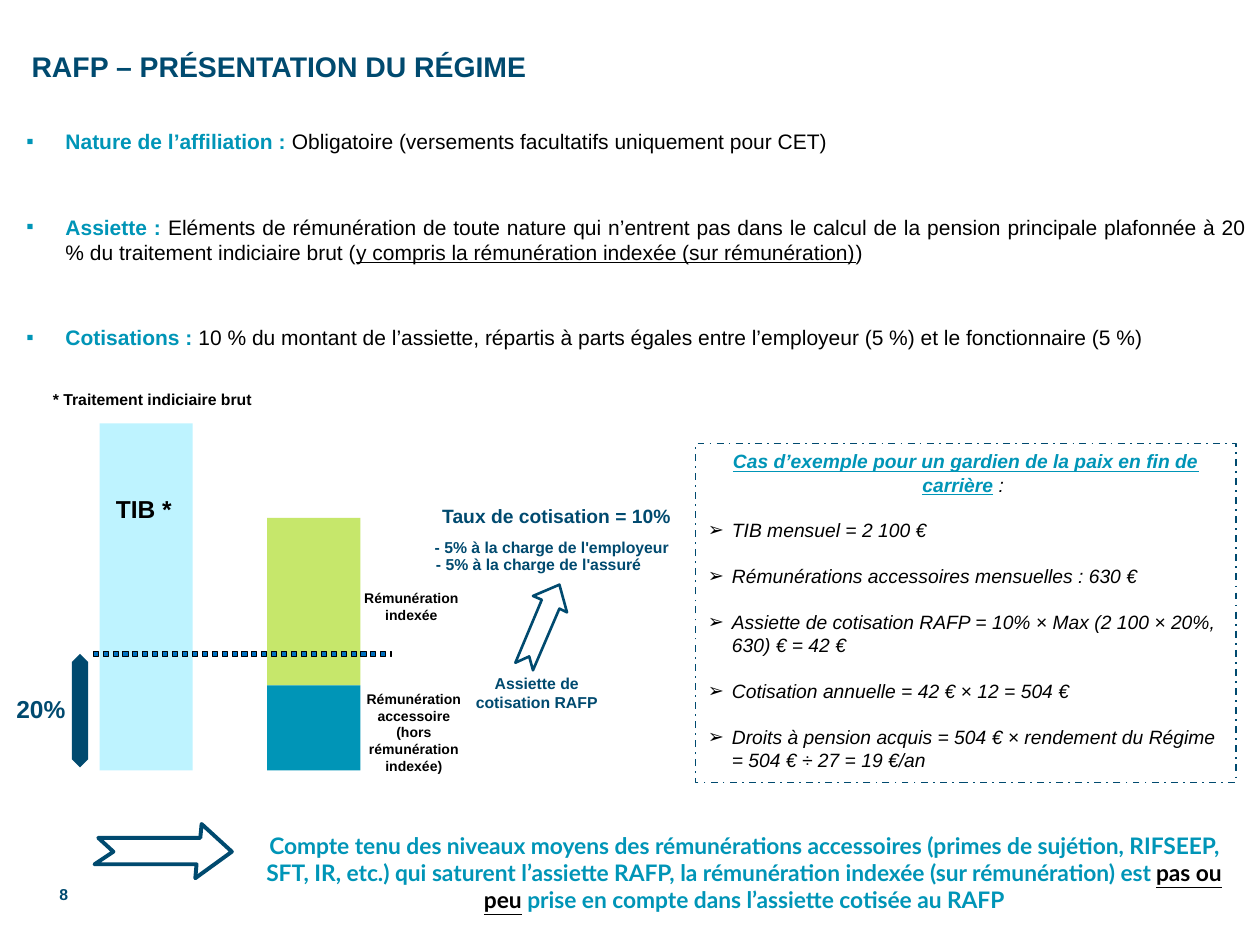
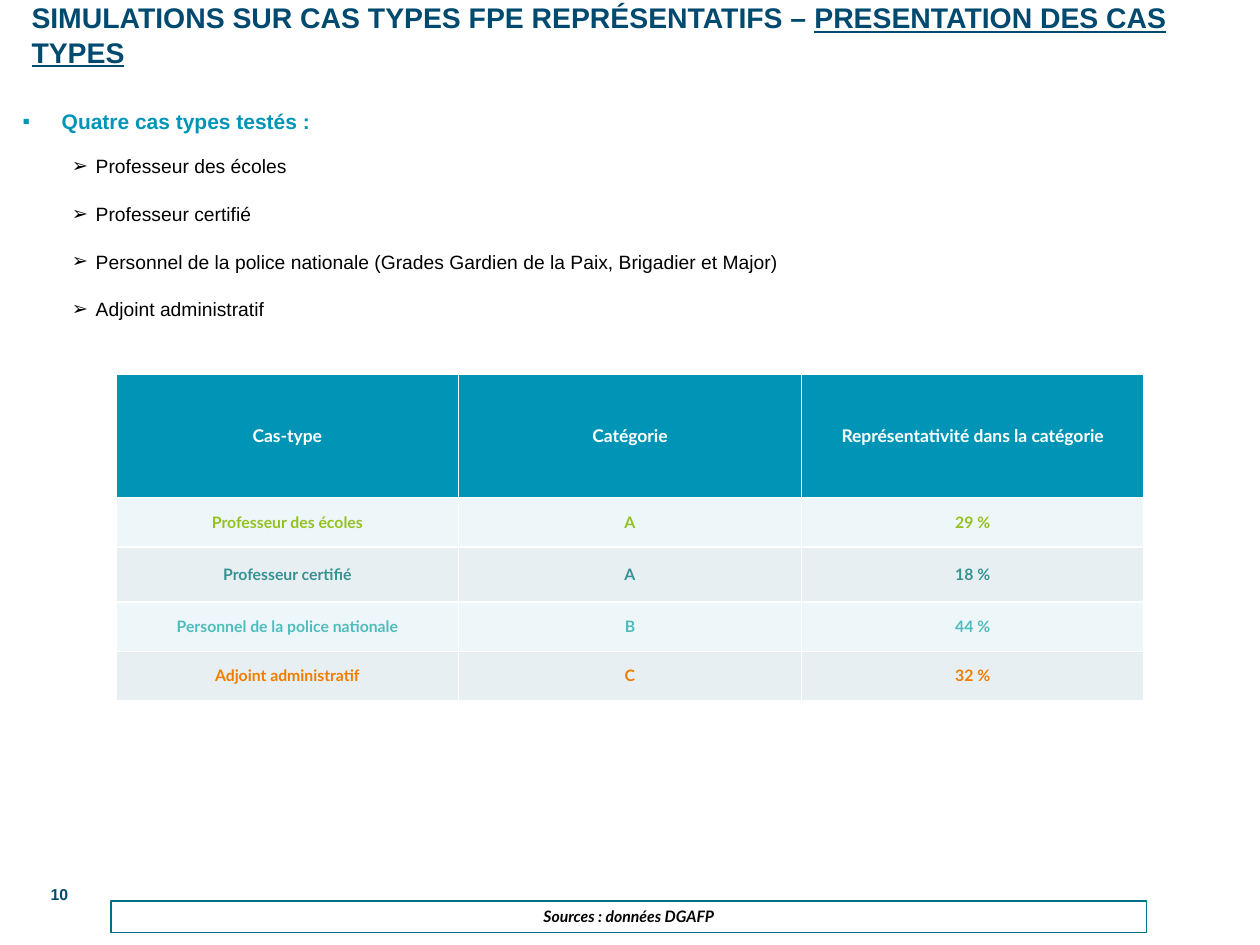
import lxml.etree
import pptx
import pptx.dml.color
import pptx.enum.dml
import pptx.enum.shapes
import pptx.enum.text
import pptx.oxml.ns
import pptx.util

COLUMNS, ROWS = 100, 75
CELL = pptx.util.Inches(0.1)

NAVY, TEAL, BLACK, WHITE = "004A6F", "0095B7", "000000", "FFFFFF"
ICE, LIME, BLUE, SOURCE_LINE = "BEF3FF", "C6E76B", "0070C0", "007089"
ROW_FILLS = ("E7EFF3", "EDF7FA")

ALIGN = pptx.enum.text.PP_ALIGN
ANCHOR = pptx.enum.text.MSO_ANCHOR
PRESET = pptx.enum.shapes.MSO_SHAPE

PLAIN = {"color": BLACK, "bold": False}
LABEL = {"size": 9, "color": NAVY}
BAR_LABEL = {"size": 8, "color": BLACK, "align": ALIGN.CENTER}


def grid(*cells):
    """Convert grid columns and rows to slide lengths."""
    return [round(n * CELL) for n in cells]


def rgb(hex_color):
    return pptx.dml.color.RGBColor.from_string(hex_color)


def format_run(run, size, color, font="Arial", bold=True, italic=False, underline=False):
    run.font.size = pptx.util.Pt(size)
    run.font.color.rgb = rgb(color)
    run.font.name = font
    run.font.bold, run.font.italic, run.font.underline = bold, italic, underline


def write(frame, paragraphs, align=ALIGN.LEFT, **style):
    """Fill a frame; a paragraph is a string or a list of (text, style changes)."""
    for number, parts in enumerate(paragraphs):
        paragraph = frame.add_paragraph() if number else frame.paragraphs[0]
        paragraph.alignment = align
        for text, changes in [(parts, {})] if isinstance(parts, str) else parts:
            run = paragraph.add_run()
            run.text = text
            format_run(run, **{**style, **changes})


def set_bullet(paragraph, char, indent, hanging, before, after=0):
    paragraph.space_before = pptx.util.Pt(before)
    paragraph.space_after = pptx.util.Pt(after)
    properties = paragraph._p.get_or_add_pPr()
    left, hang = grid(indent, hanging)
    properties.set("marL", str(left))
    properties.set("indent", str(-hang))
    for tag, key, value in (("buFont", "typeface", "Arial"), ("buChar", "char", char)):
        lxml.etree.SubElement(properties, pptx.oxml.ns.qn("a:" + tag)).set(key, value)


def paint(shape, fill=None, line=None, width=1):
    shape.shadow.inherit = False
    if fill:
        shape.fill.solid()
        shape.fill.fore_color.rgb = rgb(fill)
    else:
        shape.fill.background()
    if line:
        shape.line.color.rgb = rgb(line)
        shape.line.width = pptx.util.Pt(width)
    else:
        shape.line.fill.background()
    return shape


def add_preset(slide, area, preset=PRESET.RECTANGLE, **colors):
    return paint(slide.shapes.add_shape(preset, *grid(*area)), **colors)


def add_outline(slide, contours, **colors):
    """Draw one freeform from closed contours of grid points."""
    builder = None
    for contour in contours:
        start, *rest = [grid(*point) for point in contour]
        if builder:
            builder.move_to(*start)
        else:
            builder = slide.shapes.build_freeform(*start)
        builder.add_line_segments(rest, close=True)
    return paint(builder.convert_to_shape(), **colors)


def add_text(slide, area, paragraphs, wrap=False, inset=0, anchor=ANCHOR.TOP, **style):
    frame = slide.shapes.add_textbox(*grid(*area)).text_frame
    frame.word_wrap = wrap
    frame.vertical_anchor = anchor
    frame.margin_left = frame.margin_right = grid(inset)[0]
    frame.margin_top = frame.margin_bottom = grid(inset / 2)[0]
    write(frame, paragraphs, **style)


def fill_placeholder(placeholder, area, paragraphs, anchor, **style):
    placeholder.left, placeholder.top, placeholder.width, placeholder.height = grid(*area)
    frame = placeholder.text_frame
    frame.auto_size = pptx.enum.text.MSO_AUTO_SIZE.NONE
    frame.vertical_anchor = anchor
    write(frame, paragraphs, **style)
    return frame.paragraphs


def add_page(deck, number, title, title_area, body, body_area):
    """Add a slide with title, list and page number; return it and the list paragraphs."""
    slide = deck.slides.add_slide(deck.slide_layouts[1])
    heading, listing = slide.placeholders
    fill_placeholder(heading, title_area, [title], ANCHOR.MIDDLE, size=16.2, color=NAVY)
    items = fill_placeholder(listing, body_area, body, ANCHOR.TOP, size=12, color=TEAL)
    add_text(slide, (0.4, 69, 6, 4), [str(number)], wrap=True, inset=1,
             anchor=ANCHOR.MIDDLE, align=ALIGN.RIGHT, **LABEL)
    return slide, items


def add_pay_diagram(slide):
    bar_width, base, threshold = 7.4, 61.15, 51.9
    for left, top, bottom, color in ((7.9, 33.6, base, ICE), (21.2, 41.1, 54.4, LIME),
                                     (21.2, 54.4, base, TEAL)):
        add_preset(slide, (left, top, bar_width, bottom - top), fill=color)

    span = add_preset(slide, (5.7, threshold, 1.3, 9), PRESET.UP_DOWN_ARROW, fill=NAVY)
    span.adjustments[0], span.adjustments[1] = 0.31, 1.54

    pitch, dash, first, last = 0.787, 0.4, 7.4, 31.1
    dashes = []
    for step in range(31):
        left = first + step * pitch
        right = min(left + dash, last)
        dashes.append([(left, 51.7), (right, 51.7), (right, 52.1), (left, 52.1)])
    add_outline(slide, dashes, fill=BLUE, line=BLACK, width=0.5)

    rate_arrow = [(42.3, 47.3), (43, 47.6), (40.9, 52.6), (42, 52.1), (42.3, 53.2),
                  (44.4, 48.3), (45, 48.6), (44.4, 46.4)]
    add_outline(slide, [rate_arrow], fill=WHITE, line=NAVY, width=1.5)

    add_text(slide, (4.2, 30.9, 16.3, 1.6), ["* Traitement indiciaire brut"], size=9, color=BLACK)
    add_text(slide, (9.2, 39.2, 5.4, 3), ["TIB *"], size=14, color=BLACK)
    add_text(slide, (1.3, 55.1, 3.9, 2.5), ["20%"], wrap=True, size=14, color=NAVY)
    add_text(slide, (35.1, 40, 18.3, 2), ["Taux de cotisation = 10%"], size=11, color=NAVY)
    add_text(slide, (34.5, 42.7, 19.1, 1.5), ["- 5% à la charge de l'employeur"], **LABEL)
    add_text(slide, (34.6, 44, 16.8, 1.6), ["- 5% à la charge de l'assuré"], **LABEL)
    add_text(slide, (37.6, 53.5, 10, 3.2), ["Assiette de", "cotisation RAFP"],
             align=ALIGN.CENTER, **LABEL)
    add_text(slide, (28.2, 46.8, 8.9, 2.7), ["Rémunération indexée"], wrap=True, **BAR_LABEL)
    add_text(slide, (28.6, 54.8, 8.5, 6.7),
             ["Rémunération accessoire (hors rémunération indexée)"], wrap=True, **BAR_LABEL)


def add_example(slide):
    frame_box = add_preset(slide, (55.2, 35.2, 42.9, 26.9), line=NAVY)
    frame_box.line.dash_style = pptx.enum.dml.MSO_LINE.DASH_DOT
    frame = frame_box.text_frame
    frame.vertical_anchor = ANCHOR.TOP
    heading = [("Cas d’exemple pour un gardien de la paix en fin de carrière", {"underline": True}),
               (" ", {}), (": ", PLAIN)]
    steps = ["TIB mensuel = 2 100 €",
             "Rémunérations accessoires mensuelles : 630 €",
             "Assiette de cotisation RAFP = 10% × Max (2 100 × 20%, 630) € = 42 €",
             "Cotisation annuelle = 42 € × 12 = 504 €",
             "Droits à pension acquis = 504 € × rendement du Régime = 504 € ÷ 27 = 19 €/an"]
    write(frame, [heading] + [[(step, PLAIN)] for step in steps],
          size=11, color=TEAL, italic=True)
    title, *items = frame.paragraphs
    title.alignment = ALIGN.CENTER
    for item in items:
        set_bullet(item, "➢", 1.9, 1.9, before=13)


def add_conclusion(slide):
    arrow = [(16, 65.4), (15.9, 66.5), (7.8, 66.5), (9, 67.6), (7.5, 68.6),
             (15.6, 68.6), (15.5, 69.7), (18.4, 67.6)]
    add_outline(slide, [arrow], line=NAVY, width=2.25)
    message = [("Compte tenu des niveaux moyens des rémunérations accessoires (primes de sujétion, "
                "RIFSEEP, SFT, IR, etc.) qui saturent l’assiette RAFP, la rémunération indexée "
                "(sur rémunération) est ", {}),
               ("pas ou peu", {"color": BLACK, "underline": True}),
               (" prise en compte dans l’assiette cotisée au RAFP", {})]
    add_text(slide, (20, 65.5, 78.1, 7.6), [message], wrap=True, inset=1,
             align=ALIGN.CENTER, size=13, color=TEAL, font="Lato")


def add_border(cell, color, width):
    properties = cell._tc.get_or_add_tcPr()
    for side in ("lnL", "lnR", "lnT", "lnB"):
        line = lxml.etree.SubElement(properties, pptx.oxml.ns.qn("a:" + side),
                                     w=str(pptx.util.Pt(width)))
        solid = lxml.etree.SubElement(line, pptx.oxml.ns.qn("a:solidFill"))
        lxml.etree.SubElement(solid, pptx.oxml.ns.qn("a:srgbClr"), val=color)


def add_case_table(slide):
    cases = [(("Cas-type", "Catégorie", "Représentativité dans la catégorie"), WHITE, 9.8),
             (("Professeur des écoles", "A", "29 %"), "95C11F", 3.9),
             (("Professeur certifié", "A", "18 %"), "379292", 4.4),
             (("Personnel de la police nationale", "B", "44 %"), "50BCBD", 3.9),
             (("Adjoint administratif", "C", "32 %"), "EF7D00", 3.9)]
    height = sum(case[2] for case in cases)
    table = slide.shapes.add_table(len(cases), 3, *grid(9.2, 29.7, 81.6, height)).table
    for number, (values, color, row_height) in enumerate(cases):
        table.rows[number].height = grid(row_height)[0]
        for cell, value in zip(table.rows[number].cells, values):
            add_border(cell, WHITE, 1)
            cell.fill.solid()
            cell.fill.fore_color.rgb = rgb(ROW_FILLS[number % 2] if number else TEAL)
            cell.vertical_anchor = ANCHOR.MIDDLE
            cell.margin_left = cell.margin_right = cell.margin_top = cell.margin_bottom = 0
            write(cell.text_frame, [value], align=ALIGN.CENTER,
                  size=9 if number else 10, color=color, font="Lato")


def build_scheme(deck):
    points = [
        [("Nature de l’affiliation : ", {}),
         ("Obligatoire (versements facultatifs uniquement pour CET)", PLAIN)],
        [("Assiette : ", {}),
         ("Eléments de rémunération de toute nature qui n’entrent pas dans le calcul de la "
          "pension principale plafonnée à 20 % du traitement indiciaire brut (", PLAIN),
         ("y compris la rémunération indexée (sur rémunération)", {**PLAIN, "underline": True}),
         (")", PLAIN)],
        [("Cotisations : ", {}),
         ("10 % du montant de l’assiette, répartis à parts égales entre l’employeur (5 %) "
          "et le fonctionnaire (5 %)", PLAIN)]]
    slide, items = add_page(deck, 8, "RAFP – PRÉSENTATION DU RÉGIME", (1.5, 3.7, 56.9, 3.1),
                            points, (1.1, 9.7, 98.9, 22.5))
    for item in items:
        set_bullet(item, "▪", 3.1, 3.1, before=30.5, after=4)
    items[0].space_before = pptx.util.Pt(0)
    items[1].alignment = ALIGN.JUSTIFY
    add_pay_diagram(slide)
    add_conclusion(slide)
    add_example(slide)


def build_cases(deck):
    title = [("SIMULATIONS SUR CAS TYPES FPE REPRÉSENTATIFS – ", {}),
             ("PRESENTATION DES CAS TYPES", {"underline": True})]
    cases = ["Professeur des écoles", "Professeur certifié",
             "Personnel de la police nationale (Grades Gardien de la Paix, Brigadier et Major)",
             "Adjoint administratif"]
    body = ["Quatre cas types testés :"] + [[(case, {**PLAIN, "size": 11})] for case in cases]
    slide, (intro, *items) = add_page(deck, 10, title, (1.5, 1.2, 99.2, 3.1),
                                      body, (0.8, 8.1, 99.2, 20.1))
    set_bullet(intro, "▪", 3.1, 3.1, before=0, after=4)
    for item in items:
        item.level = 1
        set_bullet(item, "➢", 5.8, 1.9, before=8, after=6)
    add_case_table(slide)
    source = add_preset(slide, (8.8, 71.5, 82.2, 2.5), line=SOURCE_LINE, width=0.75)
    write(source.text_frame, ["Sources : données DGAFP"], align=ALIGN.CENTER,
          size=9, color=BLACK, font="Lato", italic=True)


def main():
    deck = pptx.Presentation()
    deck.slide_width, deck.slide_height = grid(COLUMNS, ROWS)
    build_scheme(deck)
    build_cases(deck)
    deck.save("out.pptx")


if __name__ == "__main__":
    main()
